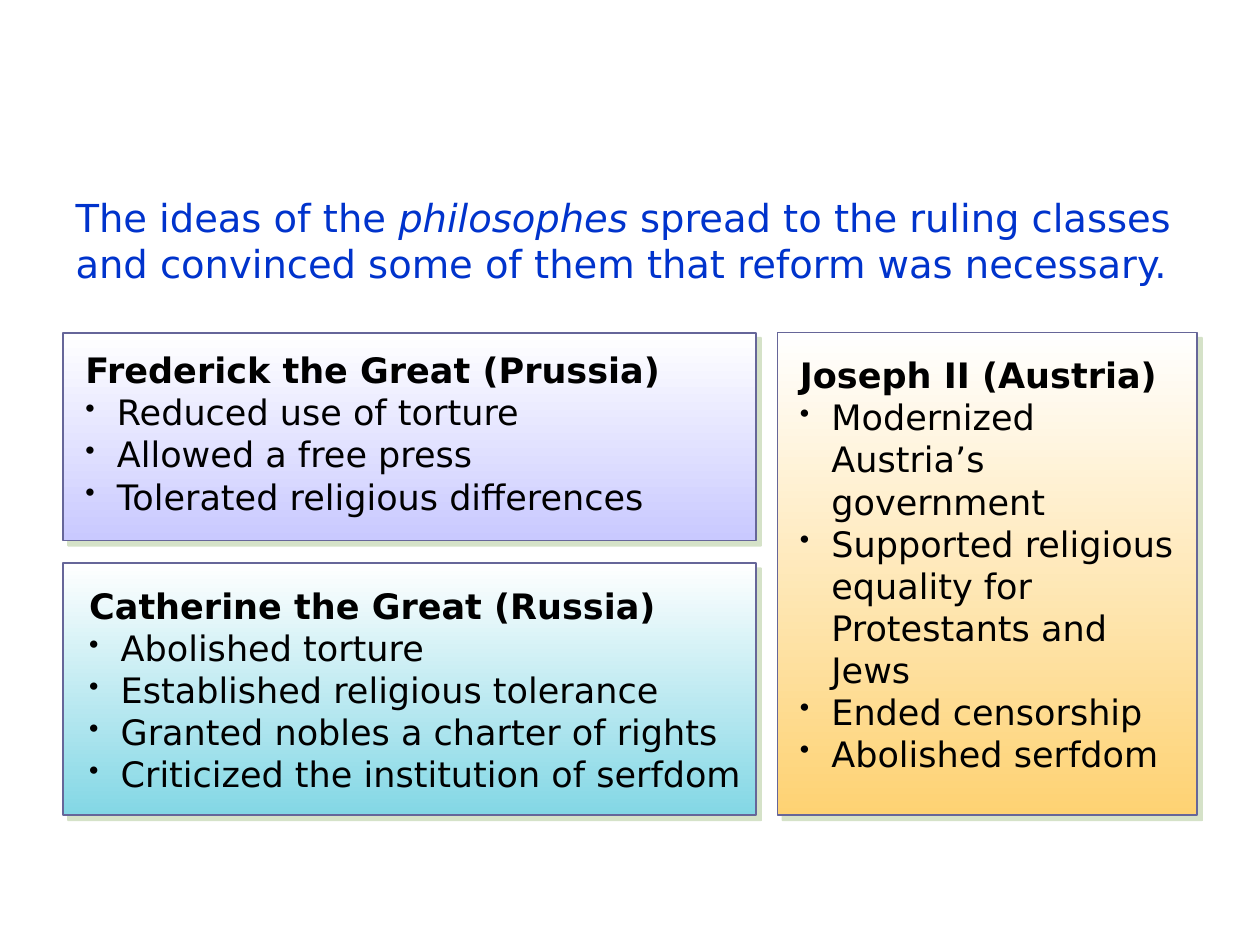
from lxml import etree
from pptx import Presentation
from pptx.dml.color import RGBColor
from pptx.enum.shapes import MSO_SHAPE
from pptx.enum.text import MSO_ANCHOR, MSO_AUTO_SIZE, PP_ALIGN
from pptx.oxml.ns import qn
from pptx.util import Inches, Pt

RECT = MSO_SHAPE.RECTANGLE
TOP = MSO_ANCHOR.TOP
LEFT = PP_ALIGN.LEFT
NO_FIT = MSO_AUTO_SIZE.NONE

FONT = "DejaVu Sans"
BLUE = RGBColor(0x00, 0x33, 0xCC)
BLACK = RGBColor(0, 0, 0)
WHITE = RGBColor(0xFF, 0xFF, 0xFF)
BORDER = RGBColor(0x66, 0x66, 0x99)
SHADOW = RGBColor(0xAD, 0xC7, 0x93)
LILAC = RGBColor(0xC9, 0xC9, 0xFF)
AQUA = RGBColor(0x83, 0xD7, 0xE5)
GOLD = RGBColor(0xFE, 0xD2, 0x73)

INTRO = [
    ("The ideas of the ", False),
    ("philosophes", True),
    (" spread to the ruling classes and convinced some of them "
     "that reform was necessary.", False),
]
RULERS = [
    {"name": "Frederick the Great (Prussia)", "color": LILAC,
     "card": (0.5, 2.64, 5.5, 1.65), "text": (0.58, 2.72, 5, 1.45),
     "reforms": ["Reduced use of torture", "Allowed a free press",
                 "Tolerated religious differences"]},
    {"name": "Catherine the Great (Russia)", "color": AQUA,
     "card": (0.5, 4.47, 5.5, 2), "text": (0.61, 4.59, 5.47, 1.79),
     "reforms": ["Abolished torture", "Established religious tolerance",
                 "Granted nobles a charter of rights",
                 "Criticized the institution of serfdom"]},
    {"name": "Joseph II (Austria)", "color": GOLD,
     "card": (6.17, 2.64, 3.33, 3.83), "text": (6.25, 2.76, 3.25, 3.49),
     "reforms": ["Modernized Austria’s government",
                 "Supported religious equality for Protestants and Jews",
                 "Ended censorship", "Abolished serfdom"]},
]


def box(values):
    return [Inches(v) for v in values]


def add_run(p, text, size=20, color=BLACK, bold=False, italic=False):
    r = p.add_run()
    r.text = text
    f = r.font
    f.name, f.size, f.bold, f.italic = FONT, Pt(size), bold, italic
    f.color.rgb = color


def add_bullet(p):
    pPr = p._p.get_or_add_pPr()
    pPr.set("marL", str(Inches(0.25)))
    pPr.set("indent", str(-Inches(0.25)))
    etree.SubElement(pPr, qn("a:buSzPct"), val="80000")
    etree.SubElement(pPr, qn("a:buChar"), char="•")


def add_shadow(sp):
    sp.shadow.inherit = False
    effects = sp._element.spPr.find(qn("a:effectLst"))
    shadow = etree.SubElement(effects, qn("a:outerShdw"), blurRad="0",
                              dist=str(Pt(4.2)), dir="2700000",
                              algn="ctr", rotWithShape="0")
    color = etree.SubElement(shadow, qn("a:srgbClr"), val=str(SHADOW))
    etree.SubElement(color, qn("a:alpha"), val="50000")


def add_card(shapes, ruler):
    group = shapes.add_group_shape().shapes
    sp = group.add_shape(RECT, *box(ruler["card"]))
    sp.fill.gradient()
    sp.fill.gradient_angle = 270
    for stop, color, position in zip(sp.fill.gradient_stops,
                                     (WHITE, ruler["color"]), (0, 1)):
        stop.color.rgb = color
        stop.position = position
    sp.line.color.rgb = BORDER
    sp.line.width = Pt(1)
    add_shadow(sp)

    tf = group.add_textbox(*box(ruler["text"])).text_frame
    tf.word_wrap = True
    add_run(tf.paragraphs[0], ruler["name"], bold=True)
    for reform in ruler["reforms"]:
        p = tf.add_paragraph()
        add_bullet(p)
        add_run(p, reform)


def main():
    prs = Presentation()
    prs.slide_width, prs.slide_height = Inches(10), Inches(7.5)
    s = prs.slides.add_slide(prs.slide_layouts[5])

    title = s.shapes.title
    title.left, title.top, title.width, title.height = box((0.5, 1.49, 9.08, 1.07))
    tf = title.text_frame
    tf.word_wrap, tf.auto_size, tf.vertical_anchor = True, NO_FIT, TOP
    p = tf.paragraphs[0]
    p.alignment = LEFT
    for text, italic in INTRO:
        add_run(p, text, size=22, color=BLUE, italic=italic)

    for ruler in RULERS:
        add_card(s.shapes, ruler)
    prs.save("out.pptx")


if __name__ == "__main__":
    main()
